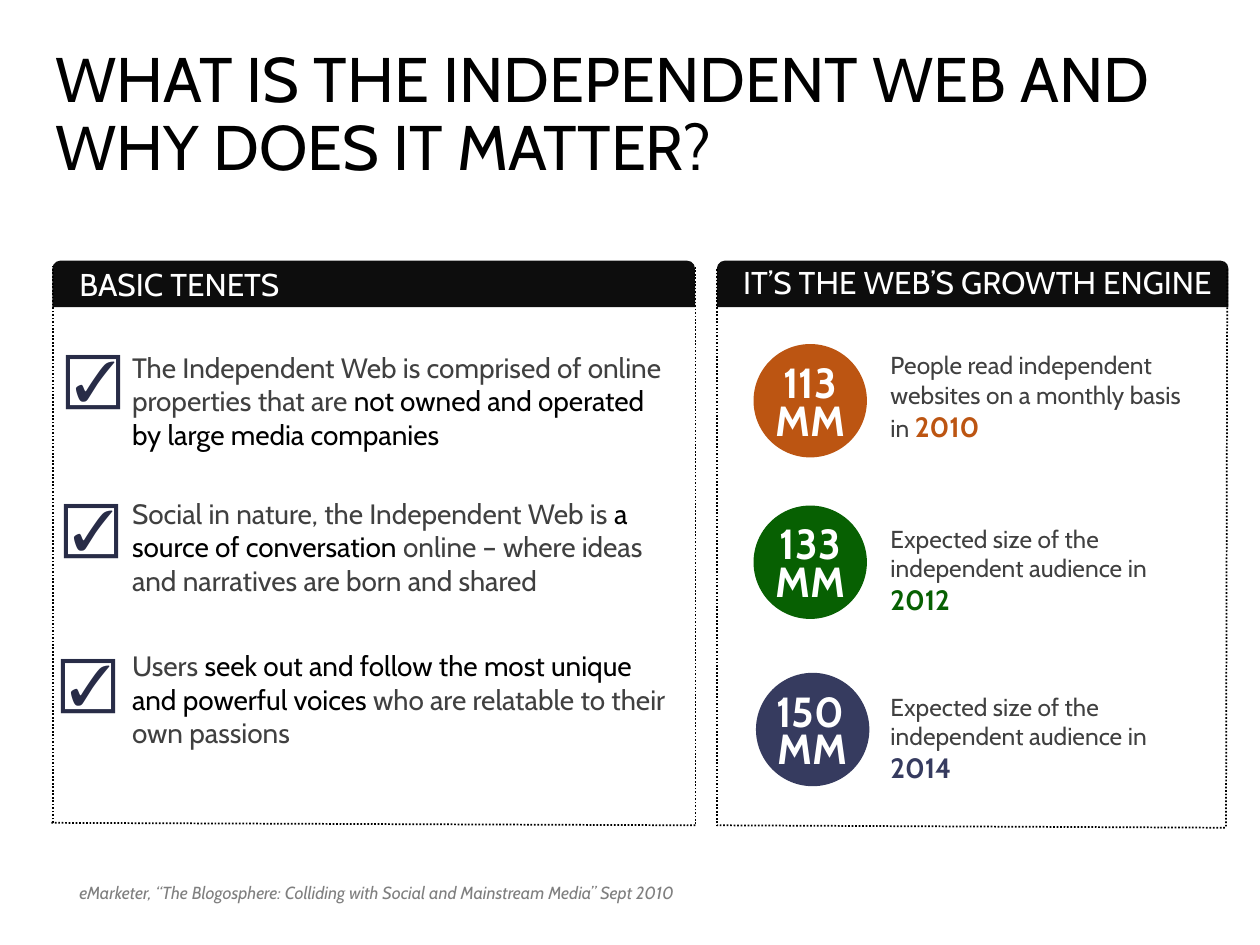
"""Build the slide on the independent web: tenets on the left, growth on the right."""
from pptx import Presentation, util as u
from pptx.dml.color import RGBColor
from pptx.enum import dml, shapes as s, text as t
from lxml import etree

Pt = u.Pt
hue = RGBColor.from_string


def fill(frame, runs, size, face="Cabin", side=t.PP_ALIGN.LEFT, mid=False, wrap=True):
    """Write runs of (words, colour, own size or None) as one paragraph."""
    frame.word_wrap = wrap
    frame.auto_size = t.MSO_AUTO_SIZE.NONE
    frame.vertical_anchor = t.MSO_ANCHOR.MIDDLE if mid else t.MSO_ANCHOR.TOP
    para = frame.paragraphs[0]
    para.alignment = side
    para.font.name, para.font.size = face, Pt(size)
    for words, tint, big in runs:
        run = para.add_run()
        run.text = words
        run.font.color.rgb = hue(tint)
        if big:
            run.font.size, run.font.bold = Pt(big), True
    return para


def shape(kind, x, y, w, h, tint):
    """Add a plain filled shape."""
    item = slide.shapes.add_shape(kind, Pt(x), Pt(y), Pt(w), Pt(h))
    item.shadow.inherit = False
    item.fill.solid()
    item.fill.fore_color.rgb = hue(tint)
    item.line.fill.background()


deck = Presentation()
deck.slide_width, deck.slide_height = Pt(720), Pt(540)
slide = deck.slides.add_slide(deck.slide_layouts[5])
box = slide.shapes.add_textbox

title = slide.shapes.title
title.left, title.top, title.width, title.height = Pt(24.5), Pt(23), Pt(656), Pt(98)
head = fill(title.text_frame,
            [("WHAT IS THE INDEPENDENT WEB AND WHY DOES IT MATTER?", "000000", None)], 36)
head.line_spacing = Pt(39)

panels = [
    (30, 367.2, 38.2, 147.6, 351, "BASIC TENETS"),
    (409.7, 292.3, 417.6, 146.9, 305, "IT’S THE WEB’S GROWTH ENGINE"),
]
for x, w, left, top, wide, words in panels:
    shape(s.MSO_SHAPE.ROUND_2_SAME_RECTANGLE, x, 149, w, 26.6, "0D0D0D")
    label = box(Pt(left), Pt(top), Pt(wide), Pt(42.5))
    fill(label.text_frame, [(words, "FFFFFF", None)], 18)

edges = [
    (30.2, 470.2, 30.2, 152), (397.4, 471, 397.4, 152.6), (397.4, 471.6, 29, 470.2),
    (409.7, 472.3, 409.7, 153.4), (700.6, 472.3, 701.3, 153.4), (700, 473, 409.7, 471.6),
]
for ends in edges:
    edge = slide.shapes.add_connector(s.MSO_CONNECTOR.STRAIGHT, *map(Pt, ends))
    edge.line.color.rgb = hue("000000")
    edge.line.width = Pt(1)
    edge.line.dash_style = dml.MSO_LINE.ROUND_DOT
    etree.SubElement(edge._element.spPr,
                     "{http://schemas.openxmlformats.org/drawingml/2006/main}effectLst")

grey, black = "404040", "000000"
tenets = [
    (196.6, 30.2, 192.2, [
        ("The Independent Web is comprised of online properties that are ", grey, None),
        ("not owned and operated by large media companies", black, None)]),
    (280.1, 29, 277.2, [
        ("Social in nature, the Independent Web is", grey, None),
        (" a source of conversation ", black, None),
        ("online – where ideas and narratives are born and shared", grey, None)]),
    (367.2, 27.4, 365.8, [
        ("Users ", grey, None),
        ("seek out and follow the most unique and powerful voices ", black, None),
        ("who are relatable to their own passions", grey, None)]),
]
for y, left, top, runs in tenets:
    fill(box(Pt(68.4), Pt(y), Pt(321), Pt(66)).text_frame, runs, 16)
    mark = box(Pt(left), Pt(top), Pt(43), Pt(46))
    fill(mark.text_frame, [("☑", "282C47", None)], 32, "Arial", wrap=False)

future = "Expected size of the independent audience in "
growth = [
    (430.6, 196.6, 196.6, "BC5512", "113",
     "People read independent websites on a monthly basis in ", "2010"),
    (430.6, 288.9, 295.9, "076002", "133", future, "2012"),
    (432, 384.5, 391.7, "363B5F", "150", future, "2014"),
]
for x, y, top, tint, count, words, year in growth:
    shape(s.MSO_SHAPE.OVAL, x, y, 64.8, 64.8, tint)
    for left, drop, part, mid in [(430.6, 3, count, True), (x, 25, "MM", False)]:
        label = box(Pt(left), Pt(y + drop), Pt(64.8), Pt(36.7))
        line = fill(label.text_frame, [(part, "FFFFFF", None)], 24,
                    side=t.PP_ALIGN.CENTER, mid=mid)
        line.font.bold = True
    note = box(Pt(501.8), Pt(top), Pt(189.4), Pt(60.5))
    fill(note.text_frame, [(words, grey, None), (year, tint, 16)], 14)

source = box(Pt(38.2), Pt(500.4), Pt(383), Pt(19.4))
cite = fill(source.text_frame, [
    ("eMarketer, “The Blogosphere: Colliding with Social and Mainstream Media” Sept 2010",
     "7F7F7F", None)], 10, wrap=False)
cite.font.italic = True

deck.save("out.pptx")
